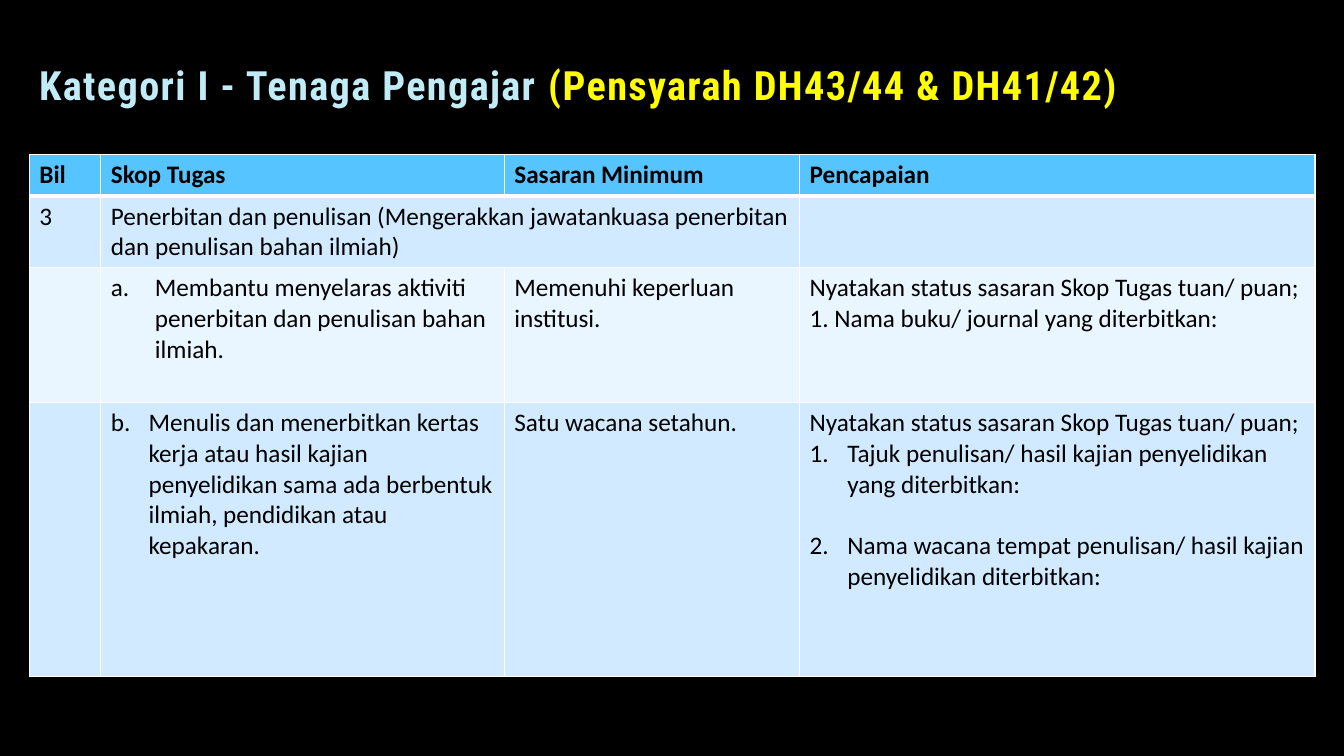
from lxml.etree import SubElement
from pptx import Presentation
from pptx.dml.color import RGBColor
from pptx.enum.text import MSO_ANCHOR
from pptx.oxml.ns import qn
from pptx.util import Cm, Pt

COLUMN_WIDTHS = [1.8, 10.17, 7.44, 12.99]
ROW_HEIGHTS = [1.05, 1.8, 3.4, 6.9]
ROW_FILLS = ["56C5FF", "D1EAFF", "E9F5FF", "D1EAFF"]
STATUS = "Nyatakan status sasaran Skop Tugas tuan/ puan;"

# Each cell lists its paragraphs; a tuple is (text, numbering, start, indent in cm, space before in pt)
ROWS = [
    [["Bil"], ["Skop Tugas"], ["Sasaran Minimum"], ["Pencapaian"]],
    [["3"],
     ["Penerbitan dan penulisan (Mengerakkan jawatankuasa penerbitan dan penulisan bahan ilmiah)"],
     [], []],
    [[],
     [("Membantu menyelaras aktiviti penerbitan dan penulisan bahan ilmiah.",
       "alphaLcPeriod", 1, 1.11, 0)],
     ["Memenuhi keperluan institusi."],
     [STATUS, "1. Nama buku/ journal yang diterbitkan:"]],
    [[],
     [("Menulis dan menerbitkan kertas kerja atau hasil kajian penyelidikan sama ada "
       "berbentuk ilmiah, pendidikan atau kepakaran.", "alphaLcPeriod", 2, 0.95, 0)],
     ["Satu wacana setahun."],
     [STATUS,
      ("Tajuk penulisan/ hasil kajian penyelidikan yang diterbitkan:",
       "arabicPeriod", 1, 0.95, 0),
      ("Nama wacana tempat penulisan/ hasil kajian penyelidikan diterbitkan:",
       "arabicPeriod", 2, 0.95, 22)]],
]


def color(value):
    return RGBColor.from_string(value)


def add_solid_fill(parent, value):
    fill = SubElement(parent, qn("a:solidFill"))
    return SubElement(fill, qn("a:srgbClr"), val=value)


def set_font(font, name, size, value, bold):
    font.name, font.size, font.bold = name, Pt(size), bold
    font.color.rgb = color(value)


def number_paragraph(paragraph, numbering, start, indent):
    properties = paragraph._p.get_or_add_pPr()
    properties.set("marL", str(Cm(indent)))
    properties.set("indent", str(-Cm(indent)))
    SubElement(properties, qn("a:buFont"), typeface="+mj-lt")
    SubElement(properties, qn("a:buAutoNum"), type=numbering, startAt=str(start))


def set_borders(cell, bottom_width):
    properties = cell._tc.get_or_add_tcPr()
    for side, width in (("L", 1), ("R", 1), ("T", 1), ("B", bottom_width)):
        line = SubElement(properties, qn(f"a:ln{side}"), w=str(Pt(width)))
        add_solid_fill(line, "FFFFFF")


def fill_cell(cell, items, fill, header):
    set_borders(cell, 3 if header else 1)
    cell.fill.solid()
    cell.fill.fore_color.rgb = color(fill)
    cell.vertical_anchor = MSO_ANCHOR.MIDDLE if header else MSO_ANCHOR.TOP
    frame = cell.text_frame
    for index, item in enumerate(items or [""]):
        paragraph = frame.add_paragraph() if index else frame.paragraphs[0]
        if isinstance(item, tuple):
            item, numbering, start, indent, space = item
            number_paragraph(paragraph, numbering, start, indent)
            if space:
                paragraph.space_before = Pt(space)
        paragraph.text = item
        set_font(paragraph.font, "Calibri", 18, "000000", header)


def add_task_table(slide, left, top):
    shape = slide.shapes.add_table(len(ROW_HEIGHTS), len(COLUMN_WIDTHS), Cm(left), Cm(top),
                                   Cm(sum(COLUMN_WIDTHS)), Cm(sum(ROW_HEIGHTS)))
    table = shape.table
    table.first_row = table.horz_banding = False
    for column, width in zip(table.columns, COLUMN_WIDTHS):
        column.width = Cm(width)
    for row_index, (row, height) in enumerate(zip(table.rows, ROW_HEIGHTS)):
        row.height = Cm(height)
        for cell, items in zip(row.cells, ROWS[row_index]):
            fill_cell(cell, items, ROW_FILLS[row_index], row_index == 0)
    # The task heading spans scope and target
    table.cell(1, 1).merge(table.cell(1, 2))


def add_title(slide, left, top, width, height):
    box = slide.shapes.add_textbox(Cm(left), Cm(top), Cm(width), Cm(height))
    frame = box.text_frame
    frame.word_wrap = True
    frame.vertical_anchor = MSO_ANCHOR.BOTTOM
    paragraph = frame.paragraphs[0]
    paragraph.line_spacing = 0.9
    for text, value in (("Kategori I - Tenaga Pengajar ", "C1EBF7"),
                        ("(Pensyarah DH43/44 & DH41/42)", "FFFF00")):
        run = paragraph.add_run()
        run.text = text
        # Letter spacing and faint outline
        properties = run._r.get_or_add_rPr()
        properties.set("spc", "100")
        outline = SubElement(properties, qn("a:ln"), w=str(Pt(0.75)))
        SubElement(add_solid_fill(outline, "404040"), qn("a:alpha"), val="10000")
        set_font(run.font, "Roboto Condensed", 28.8, value, True)


def main():
    presentation = Presentation()
    presentation.slide_width, presentation.slide_height = Cm(33.87), Cm(19.05)
    slide = presentation.slides.add_slide(presentation.slide_layouts[6])
    slide.background.fill.solid()
    slide.background.fill.fore_color.rgb = color("000000")
    add_task_table(slide, 0.74, 3.89)
    add_title(slide, 0.74, 1.19, 28.88, 1.7)
    presentation.save("out.pptx")


if __name__ == "__main__":
    main()
